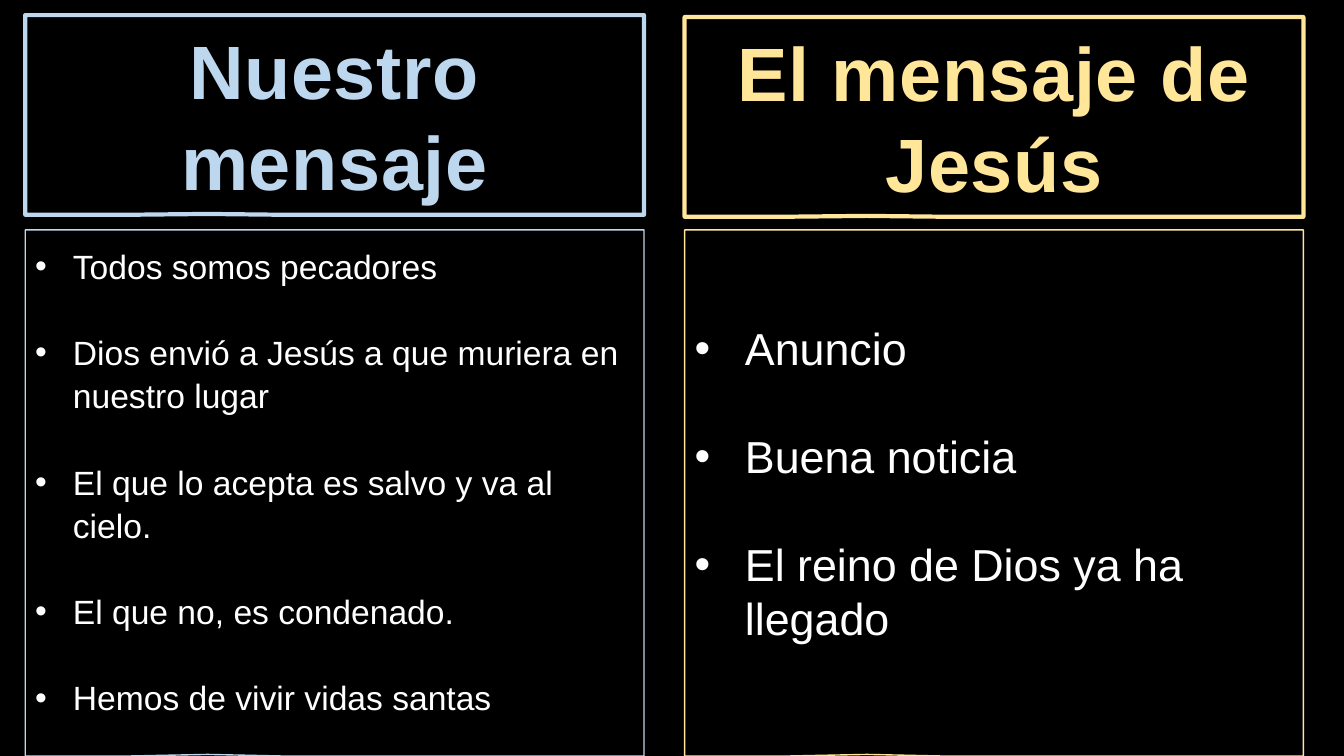
from pptx import Presentation
from pptx.dml.color import RGBColor
from pptx.enum.shapes import MSO_SHAPE as SHAPE
from pptx.enum.text import MSO_ANCHOR as ANCHOR, PP_ALIGN as ALIGN
from pptx.oxml.ns import qn
from pptx.util import Pt
from lxml.etree import SubElement

BLACK, WHITE, BLUE, YELLOW = "000000", "FFFFFF", "BDD7EE", "FFE699"
COLUMN_WIDTH, HEADING_HEIGHT = 442, 142.6
BODY_TOP, BODY_HEIGHT = 164.2, 375.8

# Each column: left edge, heading top, colour, heading, body format, messages
COLUMNS = [
    (18, 10.8, BLUE, "Nuestro mensaje",
     {"size": 24, "pitch": 30.8, "indent": 27, "top": 9.4},
     ["Todos somos pecadores",
      "Dios envió a Jesús a que muriera en nuestro lugar",
      "El que lo acepta es salvo y va al cielo.",
      "El que no, es condenado.",
      "Hemos de vivir vidas santas"]),
    (489, 12.2, YELLOW, "El mensaje de Jesús",
     {"size": 32, "pitch": 38.6, "indent": 36, "top": 64.7},
     ["Anuncio", "Buena noticia", "El reino de Dios ya ha llegado"]),
]


def color(hex_code):
    return RGBColor.from_string(hex_code)


def set_format(target, values):
    for attribute, value in values.items():
        setattr(target, attribute, value)


def add_panel(slide, kind, box, outline, weight):
    panel = slide.shapes.add_shape(kind, *(Pt(length) for length in box))
    panel.shadow.inherit = False
    panel.fill.solid()
    panel.fill.fore_color.rgb = color(BLACK)
    panel.line.color.rgb = color(outline)
    panel.line.width = Pt(weight)
    return panel


def add_callout(slide, box, outline, weight, tip):
    callout = add_panel(slide, SHAPE.RECTANGULAR_CALLOUT, box, outline, weight)
    for index, offset in enumerate(tip):
        callout.adjustments[index] = offset
    callout.text_frame.word_wrap = True
    return callout.text_frame


def write(paragraph, text, size, hex_code, bold=False):
    run = paragraph.add_run()
    run.text = text
    set_format(run.font, {"name": "Arial", "size": Pt(size), "bold": bold})
    run.font.color.rgb = color(hex_code)
    return run


def add_bullet(paragraph, indent):
    properties = paragraph._p.get_or_add_pPr()
    properties.set("marL", str(Pt(indent)))
    properties.set("indent", str(-Pt(indent)))
    SubElement(properties, qn("a:buFont")).set("typeface", "Arial")
    SubElement(properties, qn("a:buChar")).set("char", "•")


def add_heading(slide, left, top, hue, text):
    box = (left, top, COLUMN_WIDTH, HEADING_HEIGHT)
    frame = add_callout(slide, box, hue, 3, (-0.206, 0.496))
    frame.vertical_anchor = ANCHOR.MIDDLE
    heading = frame.paragraphs[0]
    set_format(heading, {"alignment": ALIGN.CENTER, "line_spacing": Pt(64.8)})
    run = write(heading, text, 54, hue, bold=True)
    run.font._element.set("spc", "50")  # letter spacing of half a point


def add_messages(slide, left, hue, style, messages):
    box = (left, BODY_TOP, COLUMN_WIDTH, BODY_HEIGHT)
    frame = add_callout(slide, box, hue, 1, (-0.205, 0.497))
    set_format(frame, {"vertical_anchor": ANCHOR.TOP,
                       "margin_top": Pt(style["top"])})
    pitch = Pt(style["pitch"])
    for number, text in enumerate(messages):
        message = frame.add_paragraph() if number else frame.paragraphs[0]
        # One line of space between messages
        set_format(message, {"alignment": ALIGN.LEFT, "line_spacing": pitch,
                             "space_before": pitch if number else Pt(0)})
        add_bullet(message, style["indent"])
        write(message, text, style["size"], WHITE)


def main():
    deck = Presentation()
    set_format(deck, {"slide_width": Pt(960), "slide_height": Pt(540)})
    slide = deck.slides.add_slide(deck.slide_layouts[6])

    # Black backdrop
    add_panel(slide, SHAPE.RECTANGLE, (0, 0, 960, 547), BLACK, 1)

    # The two messages side by side
    for left, heading_top, hue, heading, style, messages in COLUMNS:
        add_heading(slide, left, heading_top, hue, heading)
        add_messages(slide, left, hue, style, messages)

    deck.save("out.pptx")


if __name__ == "__main__":
    main()
